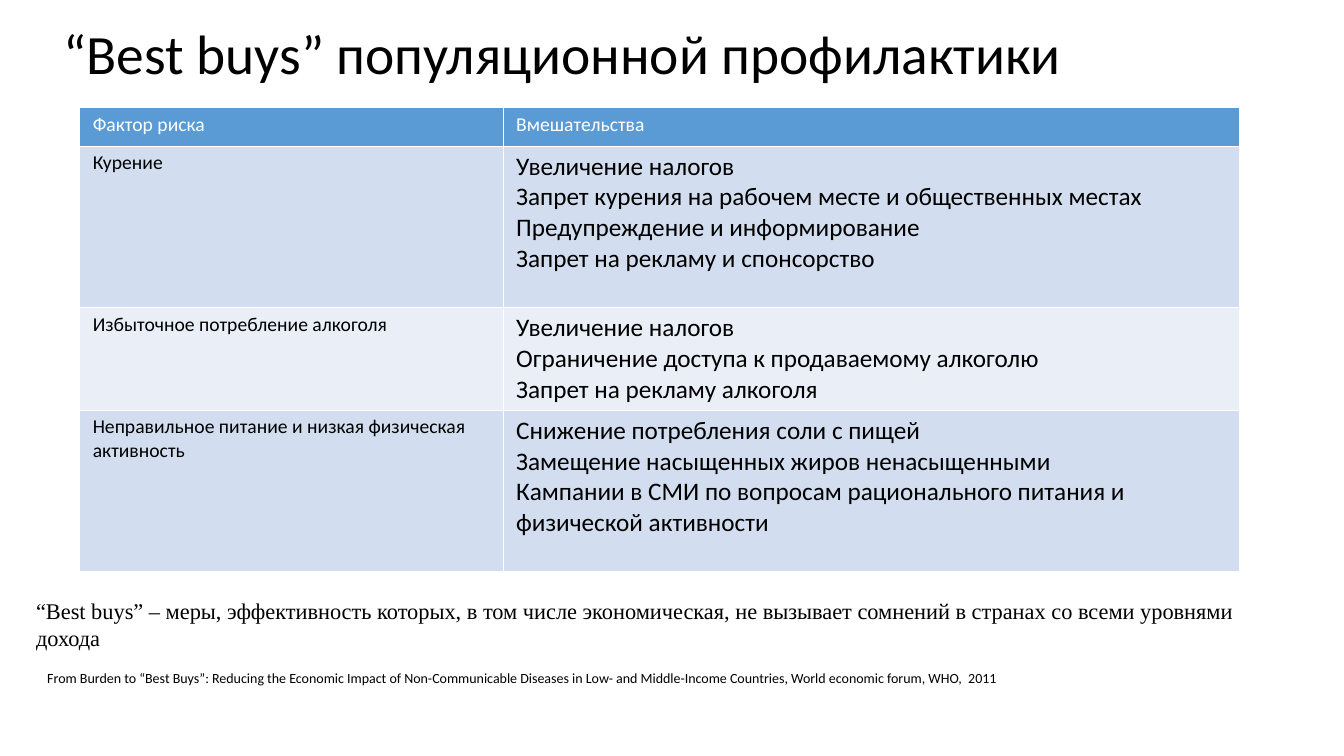
from pptx import Presentation
from pptx.dml.color import RGBColor
from pptx.enum.text import MSO_ANCHOR, MSO_AUTO_SIZE, PP_ALIGN
from pptx.util import Inches, Pt

MIDDLE, LEFT, NO_FIT = MSO_ANCHOR.MIDDLE, PP_ALIGN.LEFT, MSO_AUTO_SIZE.NONE
BLACK, WHITE = "000000", "FFFFFF"
HEADER_FILL, BAND_FILLS = "5B9BD5", ("D2DEEF", "EAEFF7")


def rgb(value):
    return RGBColor.from_string(value)


def write(frame, *lines, size=14, font="Calibri", color=BLACK, spacing=None):
    frame.word_wrap = True
    for index, line in enumerate(lines):
        paragraph = frame.add_paragraph() if index else frame.paragraphs[0]
        paragraph.alignment = LEFT
        paragraph.line_spacing = spacing
        run = paragraph.add_run()
        run.text = line
        run.font.size, run.font.name, run.font.bold = Pt(size), font, False
        run.font.color.rgb = rgb(color)


prs = Presentation()
prs.slide_width, prs.slide_height = Inches(13.33), Inches(7.5)
slide = prs.slides.add_slide(prs.slide_layouts[5])

# Title
title = slide.shapes.title
title.left, title.top = Inches(0.53), Inches(0.21)
title.width, title.height = Inches(12.07), Inches(0.71)
title.text_frame.auto_size = NO_FIT
title.text_frame.vertical_anchor = MIDDLE
write(title.text_frame, "“Best buys” популяционной профилактики", size=39.6, spacing=0.9)

# Risk factors and interventions
interventions = [
    ("Фактор риска", ["Вмешательства"]),
    ("Курение", ["Увеличение налогов",
                 "Запрет курения на рабочем месте и общественных местах",
                 "Предупреждение и информирование",
                 "Запрет на рекламу и спонсорство"]),
    ("Избыточное потребление алкоголя", ["Увеличение налогов",
                                         "Ограничение доступа к продаваемому алкоголю",
                                         "Запрет на рекламу алкоголя"]),
    ("Неправильное питание и низкая физическая активность",
     ["Снижение потребления соли с пищей",
      "Замещение насыщенных жиров ненасыщенными",
      "Кампании в СМИ по вопросам рационального питания и физической активности"]),
]
column_widths = (4.2, 7.3)
row_heights = (0.38, 1.6, 1.02, 1.6)
table = slide.shapes.add_table(
    len(row_heights), len(column_widths), Inches(0.79), Inches(1.07),
    Inches(sum(column_widths)), Inches(sum(row_heights))).table
for column, width in zip(table.columns, column_widths):
    column.width = Inches(width)

for row_index, (factor, measures) in enumerate(interventions):
    table.rows[row_index].height = Inches(row_heights[row_index])
    is_header = row_index == 0
    fill = HEADER_FILL if is_header else BAND_FILLS[(row_index - 1) % 2]
    columns = (([factor], 14), (measures, 14 if is_header else 18))
    for column_index, (lines, size) in enumerate(columns):
        cell = table.cell(row_index, column_index)
        cell.fill.solid()
        cell.fill.fore_color.rgb = rgb(fill)
        cell.margin_left = cell.margin_right = Inches(0.13)
        cell.margin_top = cell.margin_bottom = Inches(0.05)
        write(cell.text_frame, *lines, size=size, color=WHITE if is_header else BLACK)

# Source and definition below the table
footnotes = [
    ("From Burden to “Best Buys”: Reducing the Economic Impact of Non-Communicable Diseases "
     "in Low- and Middle-Income Countries, World economic forum, WHO,  2011",
     (0.37, 6.59, 12.39, 0.27), 10, "Calibri"),
    ("“Best buys” – меры, эффективность которых, в том числе экономическая, "
     "не вызывает сомнений в странах со всеми уровнями дохода",
     (0.26, 5.88, 12.6, 0.64), 16, "Times New Roman"),
]
for text, place, size, font in footnotes:
    note = slide.shapes.add_textbox(*map(Inches, place))
    write(note.text_frame, text, size=size, font=font)

prs.save("out.pptx")
